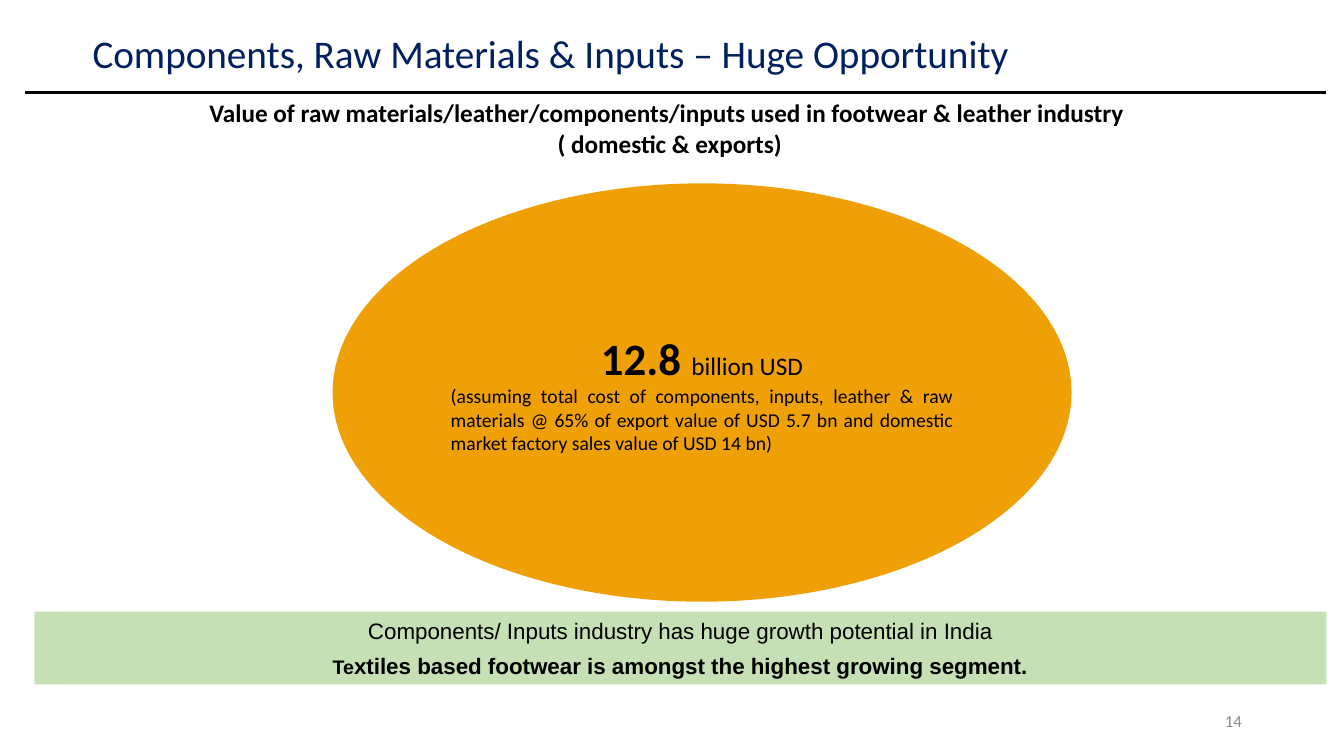
from pptx import Presentation
from pptx.dml.color import RGBColor
from pptx.enum.shapes import MSO_CONNECTOR, MSO_SHAPE
from pptx.enum.text import MSO_ANCHOR as Anchor, PP_ALIGN as Align
from pptx.oxml.ns import qn
from pptx.util import Pt

BLACK = RGBColor(0x00, 0x00, 0x00)
NAVY = RGBColor(0x00, 0x20, 0x60)
GREY = RGBColor(0x89, 0x89, 0x89)
ORANGE = RGBColor(0xEF, 0xA0, 0x07)
GREEN = RGBColor(0xC5, 0xE0, 0xB4)


def add_paragraph(shape, *runs, align=Align.CENTER, font="Calibri", color=BLACK,
                  space_before=0, line_spacing=None):
    """Append a paragraph of (text, size, bold) runs, filling the empty first one."""
    frame = shape.text_frame
    paragraph = frame.paragraphs[0]
    if paragraph.runs:
        paragraph = frame.add_paragraph()
        paragraph.space_before = Pt(space_before)
    paragraph.alignment = align
    paragraph.line_spacing = line_spacing
    for text, size, bold in runs:
        run = paragraph.add_run()
        run.text = text
        run.font.size = Pt(size)
        run.font.bold = bold
        run.font.name = font
        run.font.color.rgb = color


def add_text_box(slide, left, top, width, height, anchor=Anchor.TOP):
    box = slide.shapes.add_textbox(Pt(left), Pt(top), Pt(width), Pt(height))
    box.text_frame.word_wrap = True
    box.text_frame.vertical_anchor = anchor
    return box


def add_filled_shape(slide, kind, left, top, width, height, fill, anchor):
    shape = slide.shapes.add_shape(kind, Pt(left), Pt(top), Pt(width), Pt(height))
    shape.shadow.inherit = False
    shape.fill.solid()
    shape.fill.fore_color.rgb = fill
    shape.line.fill.background()
    shape.text_frame.word_wrap = True
    shape.text_frame.vertical_anchor = anchor
    return shape


def add_rule(slide, left, right, y):
    rule = slide.shapes.add_connector(MSO_CONNECTOR.STRAIGHT, Pt(left), Pt(y), Pt(right), Pt(y))
    rule.line.color.rgb = BLACK
    rule.line.width = Pt(2.25)
    properties = rule._element.spPr
    properties.append(properties.makeelement(qn("a:effectLst"), {}))


def main():
    presentation = Presentation()
    presentation.slide_width = Pt(960)
    presentation.slide_height = Pt(540)
    slide = presentation.slides.add_slide(presentation.slide_layouts[6])

    value = add_filled_shape(slide, MSO_SHAPE.OVAL, 237.6, 131, 527.8, 298.8,
                             ORANGE, Anchor.MIDDLE)
    add_paragraph(value, ("12.8 ", 32, True), ("billion USD", 18, False))
    add_paragraph(value, ("(assuming total cost of components, inputs, leather & raw materials "
                          "@ 65% of export value of USD 5.7 bn and domestic market factory "
                          "sales value of USD 14 bn)", 14, False), align=Align.JUSTIFY)

    heading = add_text_box(slide, 24.5, 66.2, 908, 88.6)
    add_paragraph(heading, ("Value of raw materials/leather/components/inputs used in "
                            "footwear & leather industry ", 18, True))
    add_paragraph(heading, ("( domestic & exports)", 18, True))

    outlook = add_filled_shape(slide, MSO_SHAPE.RECTANGLE, 24.5, 437, 923, 52,
                               GREEN, Anchor.TOP)
    add_paragraph(outlook, ("Components/ Inputs industry has huge growth potential in India",
                            16, False), font="Arial")
    add_paragraph(outlook, ("Te", 14, True),
                  ("xtiles based footwear is amongst the highest growing segment.", 16, True),
                  font="Arial", space_before=6)

    page_number = add_text_box(slide, 678.2, 500.4, 216, 28.8, Anchor.MIDDLE)
    add_paragraph(page_number, ("14", 12, False), align=Align.RIGHT, color=GREY)

    add_rule(slide, 18, 947.5, 66.2)

    title = add_text_box(slide, 59, 20.9, 910.8, 38.2, Anchor.MIDDLE)
    add_paragraph(title, ("Components, Raw Materials & Inputs – Huge Opportunity", 28, False),
                  align=Align.LEFT, color=NAVY, line_spacing=0.9)

    presentation.save("out.pptx")


if __name__ == "__main__":
    main()
